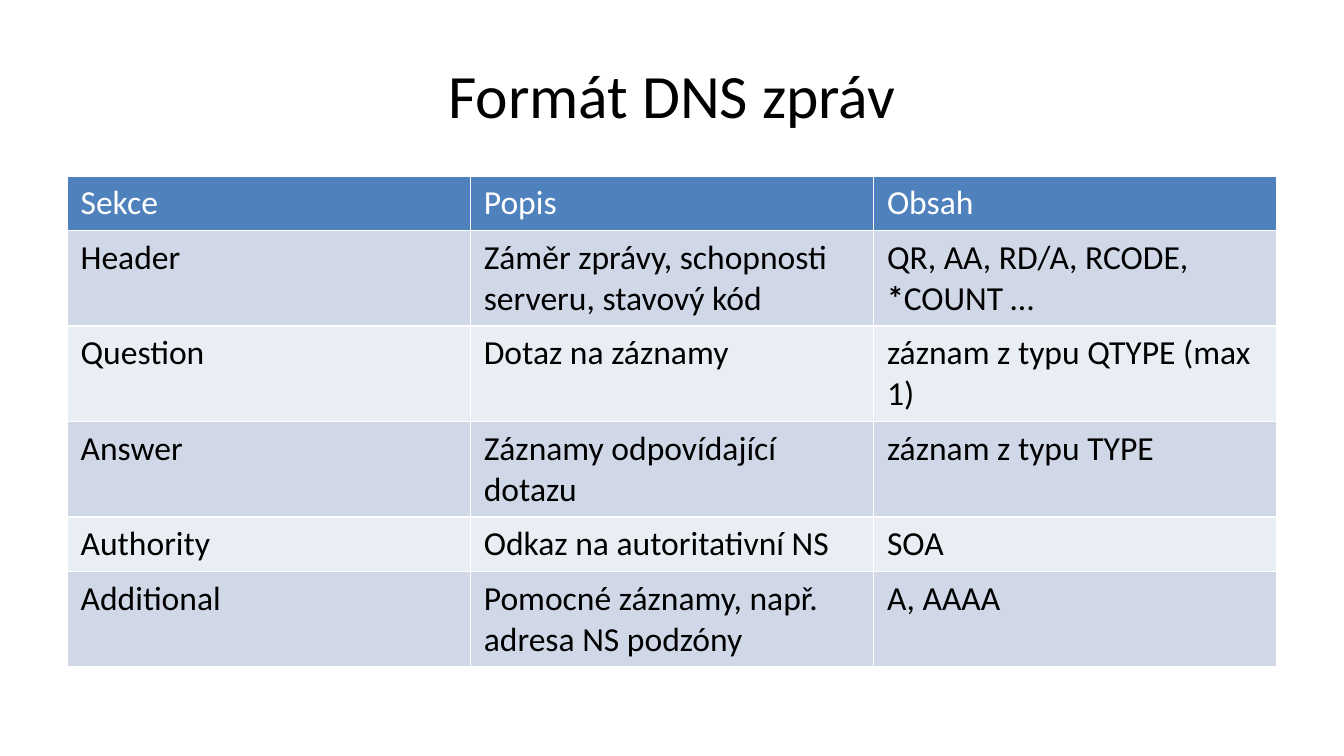
from dataclasses import dataclass

from lxml.etree import SubElement
from pptx import Presentation
from pptx.dml.color import RGBColor as Color
from pptx.enum.text import MSO_ANCHOR as Anchor, PP_ALIGN as Align
from pptx.oxml.ns import qn
from pptx.util import Inches, Pt


@dataclass(frozen=True)
class Theme:
    font: str = "Calibri"
    ink: str = "000000"
    paper: str = "FFFFFF"
    head: str = "4F81BD"
    bands: tuple = ("D0D8E8", "E9EDF4")
    title: int = 33
    body: int = 18
    line: int = 1


WIDTH = 10
HEIGHT = WIDTH * 9 / 16
TITLE = "Formát DNS zpráv"
# A cell given as a tuple holds several runs.
ROWS = [
    ("Sekce", "Popis", "Obsah"),
    ("Header", "Záměr zprávy, schopnosti serveru, stavový kód",
     ("QR, AA, RD/A, RCODE, ", "*", "COUNT …")),
    ("Question", "Dotaz na záznamy", "záznam z typu QTYPE (max 1)"),
    ("Answer", "Záznamy odpovídající dotazu", "záznam z typu TYPE"),
    ("Authority", "Odkaz na autoritativní NS", "SOA"),
    ("Additional", "Pomocné záznamy, např. adresa NS podzóny", "A, AAAA"),
]
ONE, TWO = 0.4, 0.71
HEIGHTS = [ONE, TWO, TWO, TWO, ONE, TWO]


class Deck:
    def __init__(self, theme, width, height):
        self.theme = theme
        self.show = Presentation()
        self.show.slide_width = Inches(width)
        self.show.slide_height = Inches(height)
        self.slide = self.show.slides.add_slide(self.show.slide_layouts[5])

    def style(self, run, size, color):
        font = run.font
        font.name, font.size = self.theme.font, Pt(size)
        font.bold = run.text == "*"
        font.color.rgb = Color.from_string(color)

    def title(self, text, box):
        shape = self.slide.shapes.title
        shape.left, shape.top, shape.width, shape.height = map(Inches, box)
        frame = shape.text_frame
        frame.text = text
        frame.vertical_anchor = Anchor.MIDDLE
        para = frame.paragraphs[0]
        para.alignment = Align.CENTER
        self.style(para.runs[0], self.theme.title, self.theme.ink)

    def border(self, cell):
        props = cell._tc.get_or_add_tcPr()
        for side in "LRTB":
            line = SubElement(props, qn(f"a:ln{side}"),
                              w=str(Pt(self.theme.line)))
            fill = SubElement(line, qn("a:solidFill"))
            SubElement(fill, qn("a:srgbClr"), val=self.theme.paper)

    def cell(self, cell, text, row):
        look = self.theme
        para = cell.text_frame.paragraphs[0]
        for part in (text,) if isinstance(text, str) else text:
            run = para.add_run()
            run.text = part
            self.style(run, look.body, look.ink if row else look.paper)
        self.border(cell)
        shade = look.bands[(row - 1) % 2] if row else look.head
        cell.fill.solid()
        cell.fill.fore_color.rgb = Color.from_string(shade)

    def table(self, rows, heights, left, top, width):
        frame = self.slide.shapes.add_table(
            len(rows), len(rows[0]), Inches(left), Inches(top),
            Inches(width), Inches(sum(heights)))
        grid = frame.table
        for i, (row, height) in enumerate(zip(rows, heights)):
            grid.rows[i].height = Inches(height)
            for j, text in enumerate(row):
                self.cell(grid.cell(i, j), text, i)


def main():
    deck = Deck(Theme(), WIDTH, HEIGHT)
    deck.title(TITLE, (0.5, 0.23, 9, 0.94))
    deck.table(ROWS, HEIGHTS, 0.5, 1.31, 9)
    deck.show.save("out.pptx")


if __name__ == "__main__":
    main()
